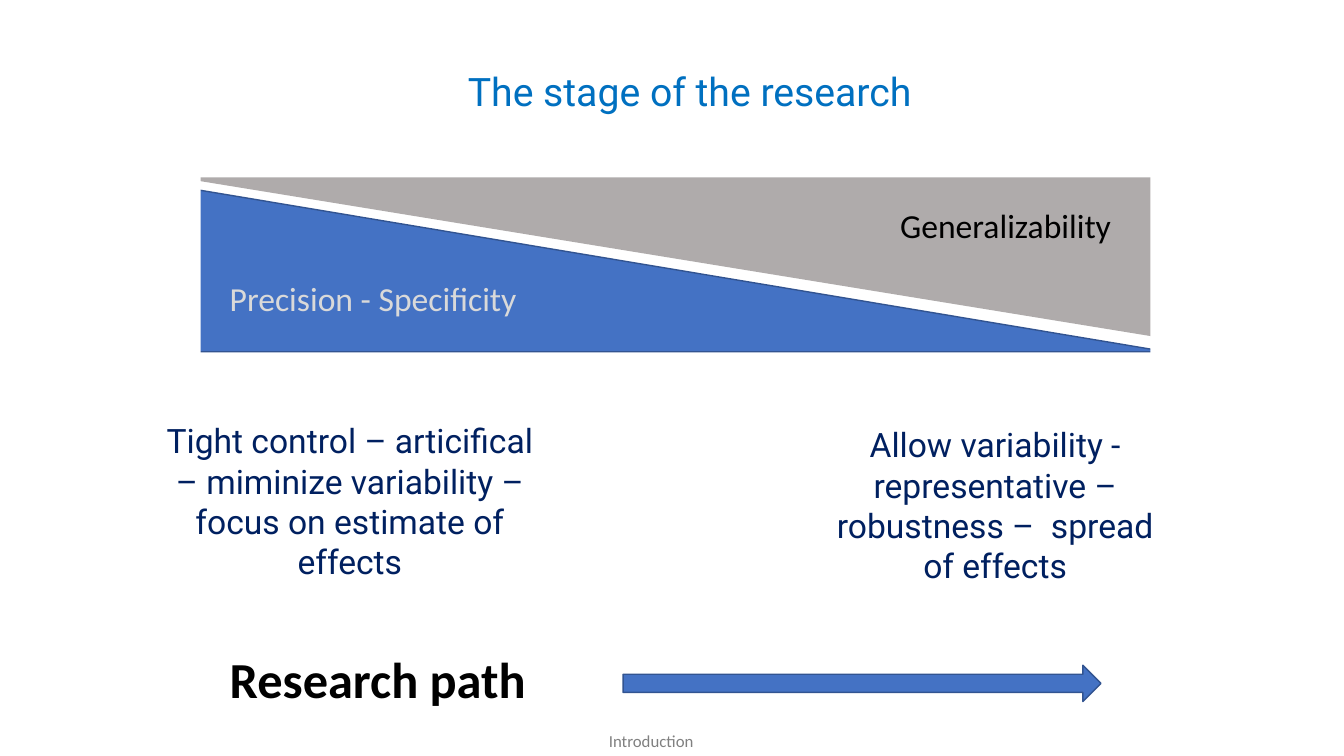
"""Build a slide showing how precision gives way to generalizability along the research path."""
from pptx import Presentation
from pptx.dml.color import RGBColor
from pptx.enum.shapes import MSO_SHAPE
from pptx.enum.text import MSO_AUTO_SIZE, PP_ALIGN
from pptx.util import Pt

PX = 9144
WHITE = RGBColor(0xFF, 0xFF, 0xFF)
BLACK = RGBColor(0x00, 0x00, 0x00)
GREY = RGBColor(0xAF, 0xAB, 0xAB)
LIGHT_GREY = RGBColor(0xD9, 0xD9, 0xD9)
FOOTER_GREY = RGBColor(0x80, 0x80, 0x80)
BLUE = RGBColor(0x44, 0x72, 0xC4)
DARK_BLUE = RGBColor(0x32, 0x54, 0x91)
TITLE_BLUE = RGBColor(0x00, 0x70, 0xC0)
NAVY = RGBColor(0x00, 0x20, 0x60)

presentation = Presentation()
presentation.slide_width = 1333 * PX
presentation.slide_height = 750 * PX
slide = presentation.slides.add_slide(presentation.slide_layouts[6])


def add_text(text, box, size, color, font="Calibri", bold=False, align=PP_ALIGN.LEFT):
    text_box = slide.shapes.add_textbox(*(length * PX for length in box))
    frame = text_box.text_frame
    frame.word_wrap = True
    frame.auto_size = MSO_AUTO_SIZE.SHAPE_TO_FIT_TEXT
    paragraph = frame.paragraphs[0]
    paragraph.alignment = align
    run = paragraph.add_run()
    run.text = text
    run.font.name = font
    run.font.size = Pt(size)
    run.font.bold = bold
    run.font.color.rgb = color


def add_shape(kind, box, fill, line=None, rotation=0):
    shape = slide.shapes.add_shape(kind, *(length * PX for length in box))
    shape.shadow.inherit = False
    shape.rotation = rotation
    shape.fill.solid()
    shape.fill.fore_color.rgb = fill
    if line is None:
        shape.line.fill.background()
    else:
        shape.line.color.rgb = line
        shape.line.width = Pt(1)


add_shape(MSO_SHAPE.RIGHT_TRIANGLE, (176, 176, 981, 160), GREY, rotation=180)
add_shape(MSO_SHAPE.RIGHT_TRIANGLE, (176, 185, 981, 164), BLUE, line=DARK_BLUE)
for left, top in ((132, 130), (1141, 134)):
    add_shape(MSO_SHAPE.RECTANGLE, (left, top, 67, 305), WHITE)

add_text("The stage of the research", (312, 62, 744, 57), 28, TITLE_BLUE,
         font="Roboto", align=PP_ALIGN.CENTER)
add_text("Precision - Specificity", (218, 271, 325, 50), 24, LIGHT_GREY)
add_text("Generalizability", (883, 198, 239, 50), 24, BLACK)

descriptions = (
    ("Tight control – articifical – miminize variability – focus on estimate of effects",
     (152, 412, 390, 172)),
    ("Allow variability - representative – robustness –  spread of effects",
     (814, 416, 346, 172)),
)
for description, box in descriptions:
    add_text(description, box, 24, NAVY, font="Roboto", align=PP_ALIGN.CENTER)

add_text("Research path", (218, 638, 801, 71), 36, BLACK, bold=True)
add_shape(MSO_SHAPE.RIGHT_ARROW, (618, 660, 474, 36), BLUE, line=DARK_BLUE)
add_text("Introduction", (594, 720, 204, 30), 12, FOOTER_GREY)

presentation.save("out.pptx")
